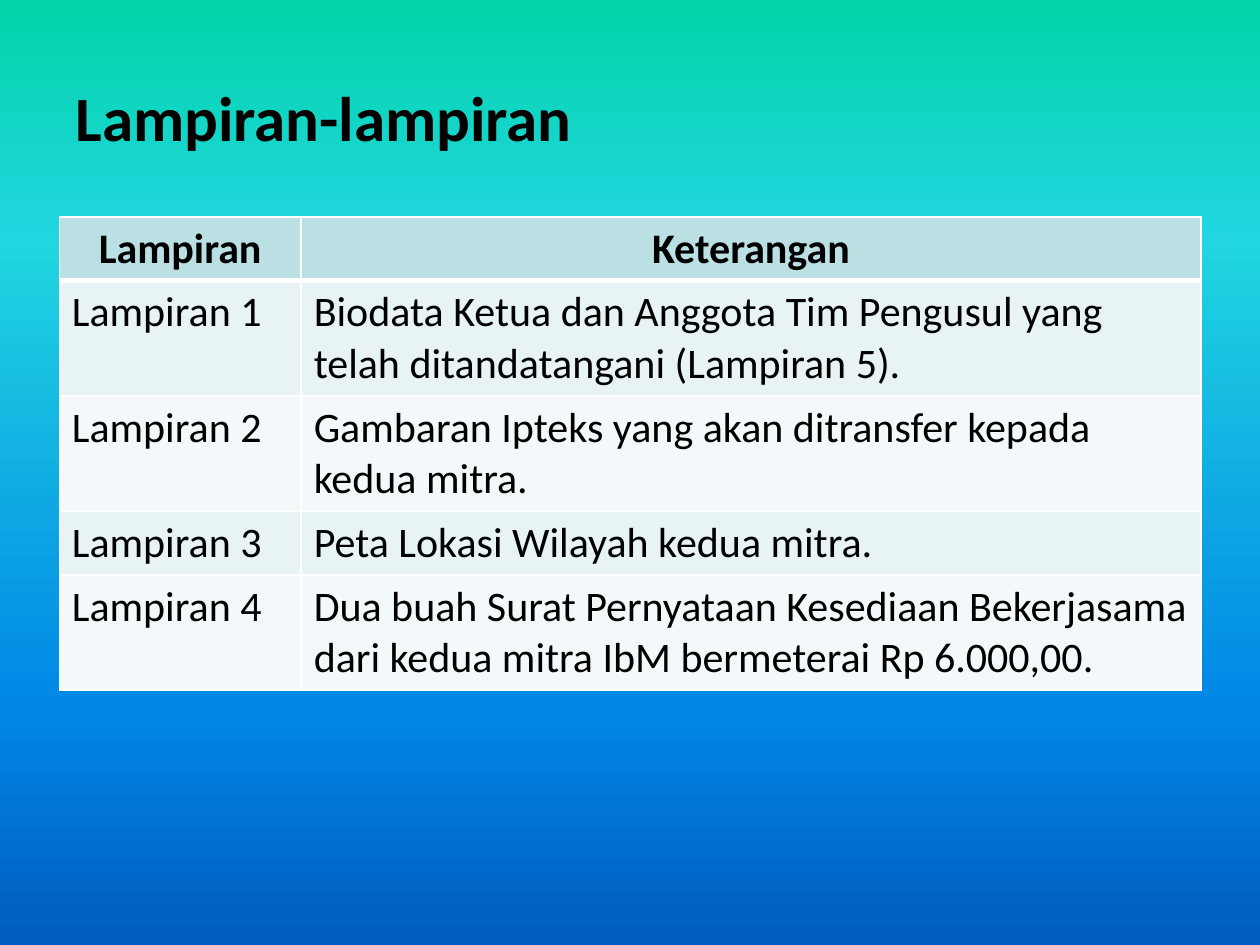
from copy import deepcopy

from lxml import etree
from pptx import Presentation
from pptx.dml.color import RGBColor
from pptx.enum.text import MSO_ANCHOR, PP_ALIGN
from pptx.oxml.ns import qn
from pptx.util import Pt

LEFT, CENTER = PP_ALIGN.LEFT, PP_ALIGN.CENTER
MIDDLE = MSO_ANCHOR.MIDDLE

TITLE = "Lampiran-lampiran"
HEADER = ("Lampiran", "Keterangan")
ROWS = [
    ("Lampiran 1", "Biodata Ketua dan Anggota Tim Pengusul yang telah ditandatangani (Lampiran 5)."),
    ("Lampiran 2", "Gambaran Ipteks yang akan ditransfer kepada kedua mitra."),
    ("Lampiran 3", "Peta Lokasi Wilayah kedua mitra."),
    ("Lampiran 4", "Dua buah Surat Pernyataan Kesediaan Bekerjasama dari kedua mitra IbM bermeterai Rp 6.000,00."),
]
GRADIENT = [(0, "03D4A8"), (0.25, "21D6E0"), (0.75, "0087E6"), (1, "005CBF")]
HEADER_FILL, BANDS = "BBE0E3", ("E7F3F4", "F3F9FA")
COL_WIDTHS = (138.2, 514.1)
LINE_COUNTS = (1, 2, 2, 1, 2)
LINE_HEIGHT, CELL_PADDING = 29.3, 7.2


def rgb(color):
    return RGBColor.from_string(color)


def put_text(tf, text, size=24, bold=False, align=LEFT, color="000000"):
    p = tf.paragraphs[0]
    p.alignment = align
    r = p.add_run()
    r.text = text
    r.font.name, r.font.size, r.font.bold = "Calibri", Pt(size), bold
    r.font.color.rgb = rgb(color)


def set_borders(cell, bottom=1, color="FFFFFF"):
    tc_pr = cell._tc.get_or_add_tcPr()
    for side, width in (("L", 1), ("R", 1), ("T", 1), ("B", bottom)):
        ln = etree.SubElement(tc_pr, qn(f"a:ln{side}"), w=str(Pt(width)))
        fill = etree.SubElement(ln, qn("a:solidFill"))
        etree.SubElement(fill, qn("a:srgbClr"), val=color)


def set_background(slide):
    fill = slide.background.fill
    fill.gradient()
    fill.gradient_angle = 270
    stop_list = next(slide._element.iter(qn("a:gsLst")))
    for _ in range(len(GRADIENT) - len(stop_list)):
        stop_list.append(deepcopy(stop_list[0]))
    for stop, (position, color) in zip(fill.gradient_stops, GRADIENT):
        stop.position = position
        stop.color.rgb = rgb(color)


def add_attachment_table(slide):
    heights = [n * LINE_HEIGHT + CELL_PADDING for n in LINE_COUNTS]
    frame = slide.shapes.add_table(len(heights), len(COL_WIDTHS), Pt(33.9), Pt(123.9),
                                   Pt(sum(COL_WIDTHS)), Pt(sum(heights)))
    table = frame.table
    for column, width in zip(table.columns, COL_WIDTHS):
        column.width = Pt(width)
    for i, texts in enumerate([HEADER, *ROWS]):
        table.rows[i].height = Pt(heights[i])
        is_header = i == 0
        for j, text in enumerate(texts):
            cell = table.cell(i, j)
            set_borders(cell, bottom=3 if is_header else 1)
            cell.fill.solid()
            cell.fill.fore_color.rgb = rgb(HEADER_FILL if is_header else BANDS[(i - 1) % 2])
            put_text(cell.text_frame, text, bold=is_header, align=CENTER if is_header else LEFT)


def main():
    prs = Presentation()
    prs.slide_width, prs.slide_height = Pt(720), Pt(540)
    slide = prs.slides.add_slide(prs.slide_layouts[5])
    set_background(slide)

    title = slide.shapes.title
    title.left, title.top, title.width, title.height = Pt(36), Pt(21.6), Pt(648), Pt(90)
    title.text_frame.vertical_anchor = MIDDLE
    put_text(title.text_frame, TITLE, size=36, bold=True)

    add_attachment_table(slide)
    prs.save("out.pptx")


if __name__ == "__main__":
    main()
